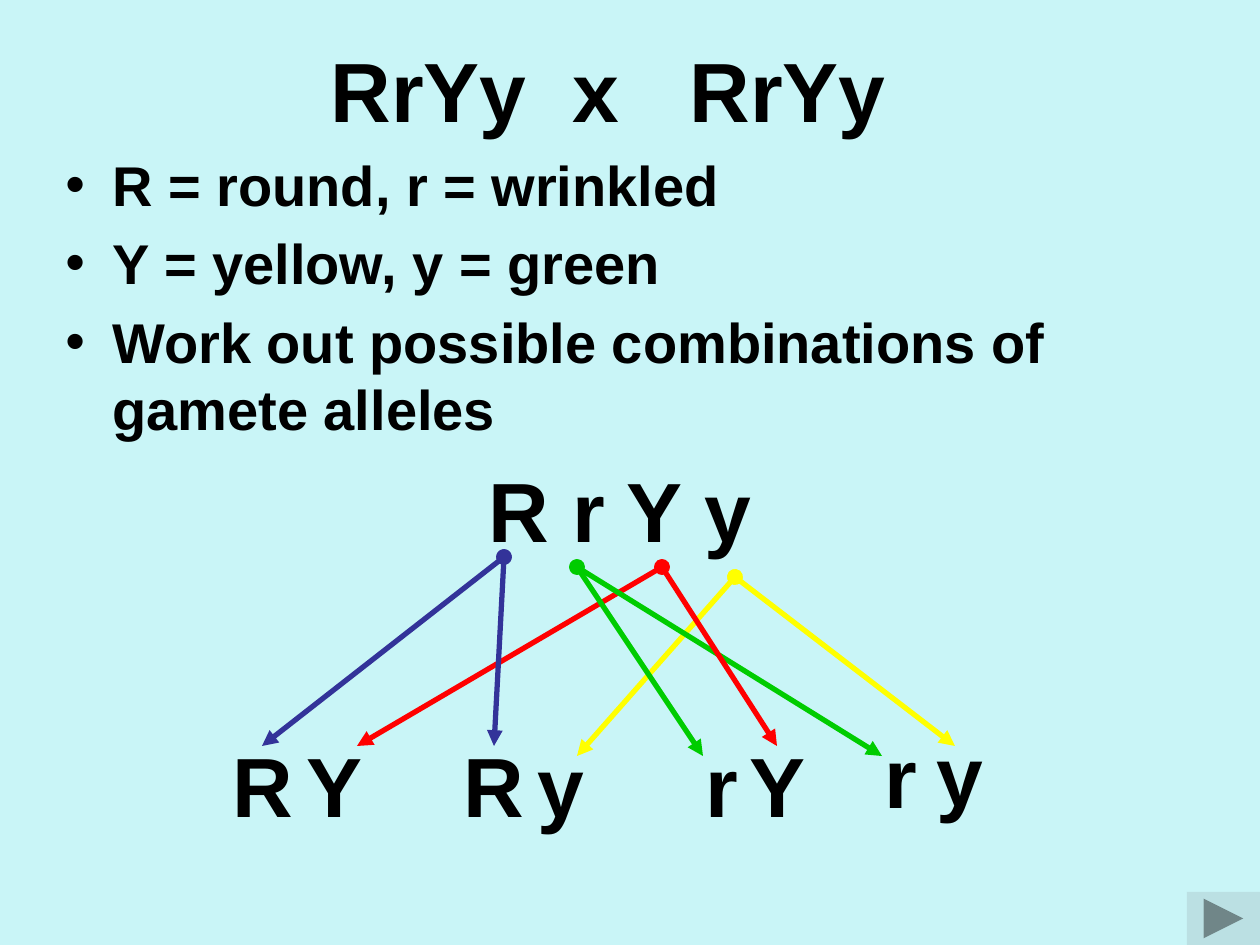
import lxml.etree
import pptx
import pptx.dml.color
import pptx.enum.shapes
import pptx.enum.text
import pptx.oxml.ns
import pptx.util

PX = 914400 / 126
ALIGN = pptx.enum.text.PP_ALIGN


def px(length):
    return pptx.util.Emu(round(length * PX))


def colour(value):
    return pptx.dml.color.RGBColor.from_string(value)


def add_element(parent, tag, **attributes):
    return lxml.etree.SubElement(parent, pptx.oxml.ns.qn(tag), attributes)


def apply_format(target, values):
    for name, value in values.items():
        setattr(target, name, value)


def style_font(span, size):
    values = {"name": "Arial", "size": pptx.util.Pt(size), "bold": True}
    apply_format(span.font, values)
    span.font.color.rgb = colour("000000")


def add_text_box(page, box, wrap):
    frame = page.shapes.add_textbox(*map(px, box)).text_frame
    frame.word_wrap = wrap
    return frame


def add_body(page, box):
    frame = add_text_box(page, box, True)
    rows = [
        ("RrYy  x   RrYy ", 48, False),
        ("R = round, r = wrinkled", 32, True),
        ("Y = yellow, y = green", 32, True),
        ("Work out possible combinations of gamete alleles", 32, True),
        ("R r Y y", 48, False),
    ]
    for index, (text, size, bulleted) in enumerate(rows):
        para = frame.add_paragraph() if index else frame.paragraphs[0]
        properties = para._p.get_or_add_pPr()
        properties.set("marL", str(px(47)))
        properties.set("indent", str(px(-47)))
        if index:
            para.space_before = pptx.util.Pt(size * 0.2)
        if bulleted:
            add_element(properties, "a:buFont", typeface="Arial")
            add_element(properties, "a:buChar", char="•")
        para.alignment = ALIGN.LEFT if bulleted else ALIGN.CENTER
        span = para.add_run()
        span.text = text
        style_font(span, size)


def add_gamete(page, box, letters):
    left, top, height = box
    for letter, offset, drop, width in letters:
        place = (left + offset, top + drop, width, height)
        frame = add_text_box(page, place, False)
        span = frame.paragraphs[0].add_run()
        span.text = letter
        style_font(span, 48)


def add_arrow(page, start, end, line_colour):
    arrow = page.shapes.add_connector(
        pptx.enum.shapes.MSO_CONNECTOR.STRAIGHT, *map(px, start + end))
    arrow.line.color.rgb = colour(line_colour)
    arrow.line.width = pptx.util.Pt(3)
    line = arrow.line._get_or_add_ln()
    add_element(line, "a:headEnd", type="oval")
    add_element(line, "a:tailEnd", type="triangle")
    add_element(arrow._element.spPr, "a:effectLst")


def add_arrows(page, box):
    left, top = box
    alleles = {
        "R": ((242, 0), "333399"),
        "r": ((315, 10), "00CC00"),
        "Y": ((400, 10), "FF0000"),
        "y": ((473, 20), "FFFF00"),
    }
    targets = [
        ("R", 0, 189), ("Y", 95, 189), ("R", 232, 189), ("y", 315, 199),
        ("r", 441, 199), ("r", 620, 199), ("y", 693, 189), ("Y", 515, 189),
    ]
    for allele, x, y in targets:
        (start_x, start_y), line_colour = alleles[allele]
        add_arrow(page, (left + start_x, top + start_y),
                  (left + x, top + y), line_colour)


def add_next_button(page, box):
    kind = pptx.enum.shapes.MSO_SHAPE.ACTION_BUTTON_FORWARD_OR_NEXT
    button = page.shapes.add_shape(kind, *map(px, box))
    button.shadow.inherit = False
    button.fill.solid()
    button.fill.fore_color.rgb = colour("BBE0E3")
    button.line.fill.background()


def main():
    deck = pptx.Presentation()
    apply_format(deck, {"slide_width": px(1260), "slide_height": px(945)})
    page = deck.slides.add_slide(deck.slide_layouts[6])
    page.background.fill.solid()
    page.background.fill.fore_color.rgb = colour("C9F5F7")
    add_body(page, (53, 32, 1134, 882))
    add_gamete(page, (220, 727, 113), [("R", 0, 0, 84), ("Y", 74, 0, 82)])
    add_gamete(page, (451, 727, 113), [("R", 0, 0, 84), ("y", 74, 0, 72)])
    add_gamete(page, (693, 727, 113), [("r", 0, 0, 63), ("Y", 44, 0, 82)])
    add_gamete(page, (872, 716, 113), [("r", 0, 2, 63), ("y", 52, 0, 72)])
    add_arrows(page, (262, 557))
    add_next_button(page, (1187, 892, 73, 53))
    deck.save("out.pptx")


if __name__ == "__main__":
    main()
